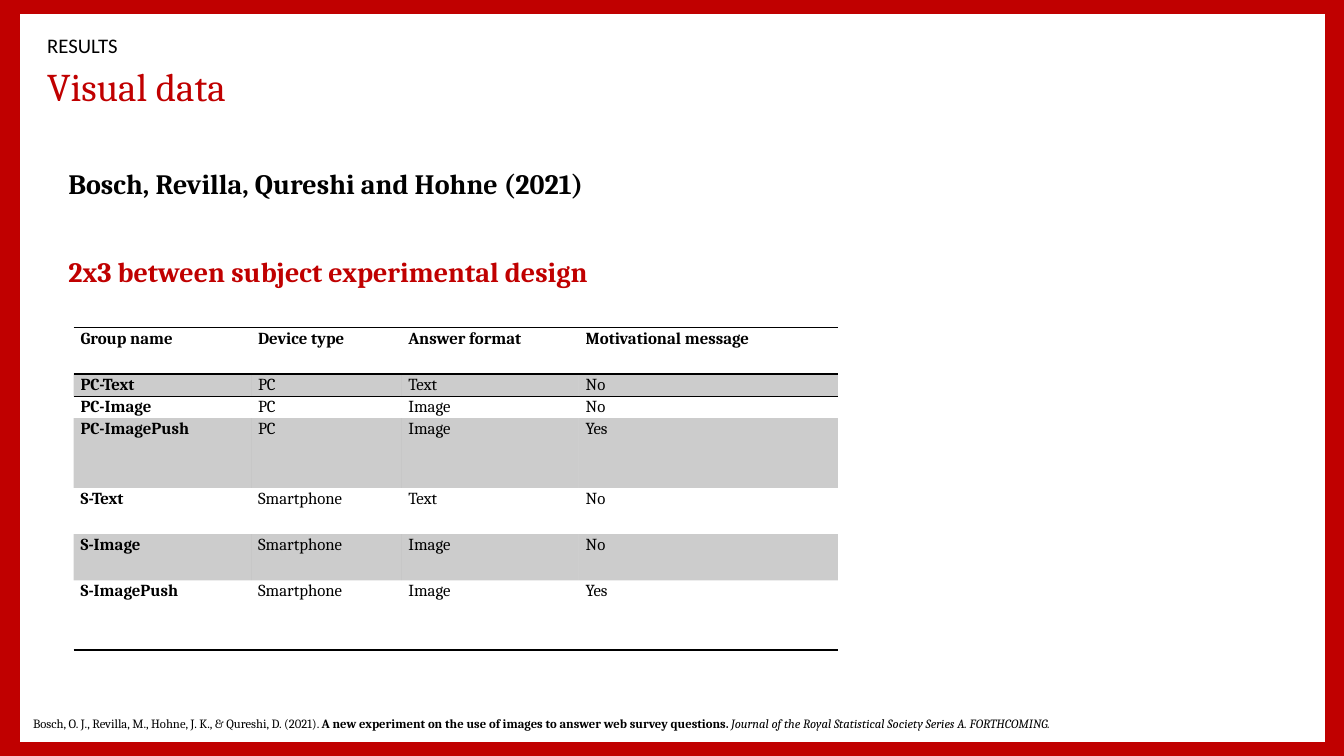
import pptx
import pptx.util
import pptx.dml.color
import pptx.enum.shapes
import pptx.enum.text
import pptx.oxml
import pptx.oxml.ns

HUES = {"red": "C00000", "white": "FFFFFF", "black": "000000"}
FRAME = [
    ((0, 0, 13.33, 7.5), "red"),
    ((0.2, 0.14, 12.94, 7.22), "white"),
]
TITLE = [("Visual data", {"size": 28, "hue": "red"})]
LABEL = [("RESULTS", {"size": 14.8, "face": "Calibri"})]
STUDY = [("Bosch, Revilla, Qureshi and Hohne (2021)", {"size": 20, "bold": True})]
DESIGN = [("2x3 between subject experimental design",
           {"size": 20, "bold": True, "hue": "red"})]
SOURCE = [
    ("Bosch, O. J., Revilla, M., Hohne, J. K., & Qureshi, D. (2021). ", {"size": 9}),
    ("A new experiment on the use of images to answer web survey questions. ",
     {"size": 9, "bold": True}),
    ("Journal of the Royal Statistical Society Series A. FORTHCOMING.",
     {"size": 9, "slant": True}),
]
GROUPS = [
    ("Group name", "Device type", "Answer format", "Motivational message"),
    ("PC-Text", "PC", "Text", "No"),
    ("PC-Image", "PC", "Image", "No"),
    ("PC-ImagePush", "PC", "Image", "Yes"),
    ("S-Text", "Smartphone", "Text", "No"),
    ("S-Image", "Smartphone", "Image", "No"),
    ("S-ImagePush", "Smartphone", "Image", "Yes"),
]
WIDTHS = [1.76, 1.49, 1.76, 2.57]
HEIGHTS = [0.46, 0.22, 0.22, 0.69, 0.46, 0.46, 0.69]
PLAIN = "{2D5ABB26-0587-4C30-8999-92F81FD0307C}"

Inches = pptx.util.Inches
Pt = pptx.util.Pt
Anchor = pptx.enum.text.MSO_ANCHOR
NS = pptx.oxml.ns.nsdecls("a")


def color(hue):
    return pptx.dml.color.RGBColor.from_string(HUES[hue])


def style(font, size, hue="black", face="Cambria", bold=False, slant=False):
    font.size = Pt(size)
    font.name = face
    font.bold = bold
    font.italic = slant
    font.color.rgb = color(hue)


def add_text(slide, box, paras, anchor=Anchor.TOP, line=1.0, gap=0):
    frame = slide.shapes.add_textbox(*map(Inches, box)).text_frame
    frame.word_wrap = True
    frame.vertical_anchor = anchor
    for i, runs in enumerate(paras):
        para = frame.add_paragraph() if i else frame.paragraphs[0]
        para.line_spacing = line
        if i:
            para.space_before = Pt(gap)
        for words, look in runs:
            run = para.add_run()
            run.text = words
            style(run.font, **look)


def add_rule(cell, side):
    props = cell._tc.get_or_add_tcPr()
    rule = pptx.oxml.parse_xml(
        f'<a:ln{side} {NS} w="12700"><a:solidFill>'
        f'<a:srgbClr val="{HUES["black"]}"/></a:solidFill></a:ln{side}>')
    props.insert(0, rule)


def fill_cell(cell, words, row, col):
    last = len(GROUPS) - 1
    cell.text_frame.text = words
    cell.margin_left = cell.margin_right = Inches(0.07)
    cell.margin_top = cell.margin_bottom = 0
    para = cell.text_frame.paragraphs[0]
    para.alignment = pptx.enum.text.PP_ALIGN.JUSTIFY
    para.line_spacing = 1.07
    para.space_after = Pt(8)
    style(para.runs[0].font, 12, bold=row == 0 or col == 0)
    if row % 2:
        cell.fill.solid()
        cell.fill.fore_color.rgb = color("black")
        tint = cell._tc.tcPr.find(".//" + pptx.oxml.ns.qn("a:srgbClr"))
        tint.append(pptx.oxml.parse_xml(f'<a:alpha {NS} val="20000"/>'))
    else:
        cell.fill.background()
    if row in (0, last):
        add_rule(cell, "B")
    if row in (0, 1):
        add_rule(cell, "T")


def add_groups(slide):
    box = (0.73, 3.25, sum(WIDTHS), sum(HEIGHTS))
    table = slide.shapes.add_table(
        len(GROUPS), len(WIDTHS), *map(Inches, box)).table
    table.first_row = table.horz_banding = False
    table._tbl.tblPr.find(pptx.oxml.ns.qn("a:tableStyleId")).text = PLAIN
    for column, width in zip(table.columns, WIDTHS):
        column.width = Inches(width)
    for line, height in zip(table.rows, HEIGHTS):
        line.height = Inches(height)
    for row, group in enumerate(GROUPS):
        for col, words in enumerate(group):
            fill_cell(table.cell(row, col), words, row, col)


def main():
    deck = pptx.Presentation()
    deck.slide_width, deck.slide_height = Inches(13.33), Inches(7.5)
    slide = deck.slides.add_slide(deck.slide_layouts[6])
    for box, hue in FRAME:
        panel = slide.shapes.add_shape(
            pptx.enum.shapes.MSO_SHAPE.RECTANGLE, *map(Inches, box))
        panel.shadow.inherit = False
        panel.fill.solid()
        panel.fill.fore_color.rgb = color(hue)
        panel.line.fill.background()
    add_text(slide, (0.37, 0.65, 11.67, 0.47), [TITLE], Anchor.MIDDLE, 0.9)
    add_text(slide, (0.58, 1.64, 7.33, 1.4), [STUDY, DESIGN], line=0.9, gap=41.5)
    add_text(slide, (0.37, 0.32, 11.28, 0.31), [LABEL], Anchor.MIDDLE, 0.8)
    add_text(slide, (0.23, 7.05, 12.17, 0.25), [SOURCE])
    add_groups(slide)
    deck.save("out.pptx")


if __name__ == "__main__":
    main()
